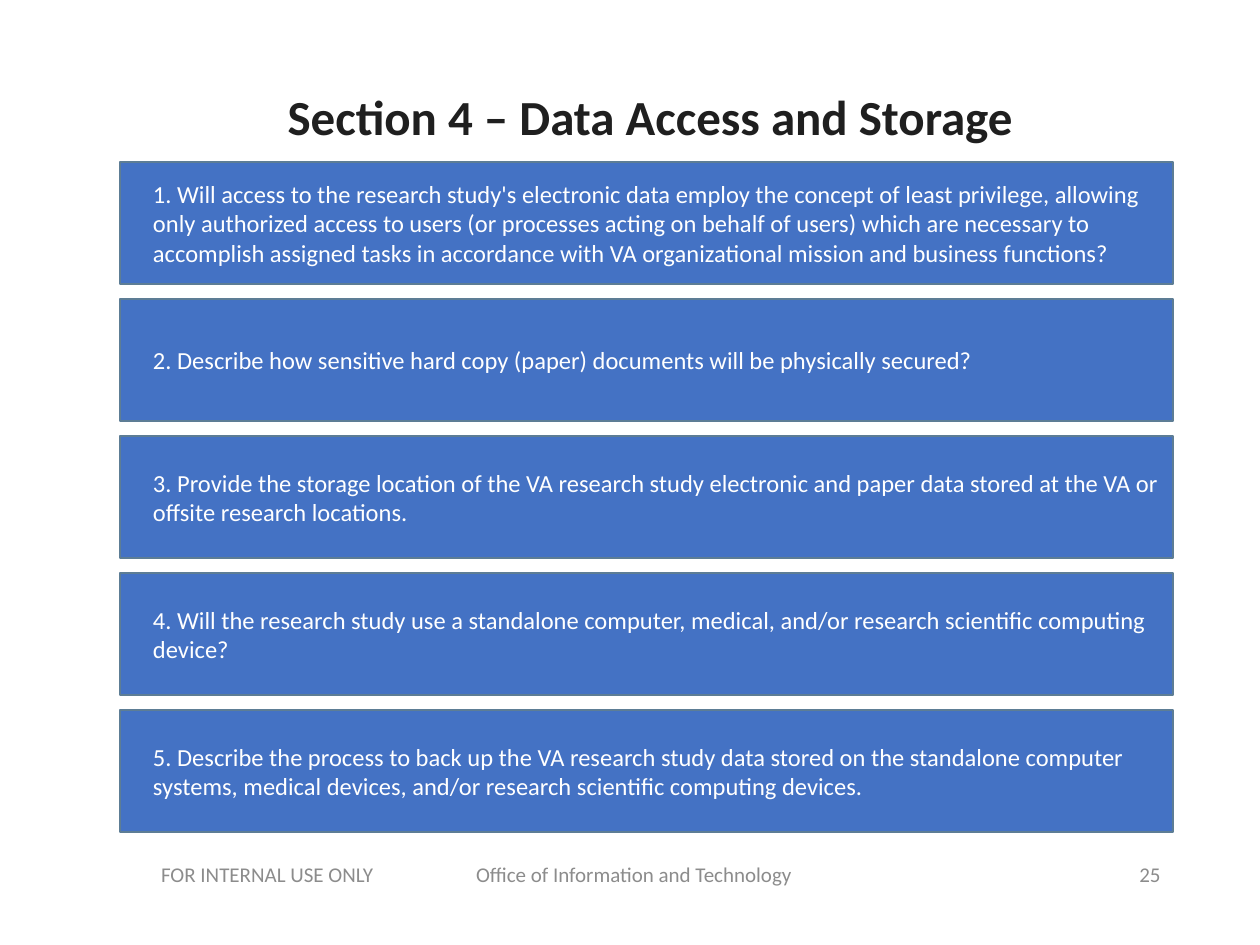
from dataclasses import dataclass

from pptx import Presentation
from pptx.dml.color import RGBColor
from pptx.enum.shapes import MSO_SHAPE
from pptx.enum.text import MSO_ANCHOR, PP_ALIGN
from pptx.util import Pt

RECT = MSO_SHAPE.RECTANGLE
MIDDLE = MSO_ANCHOR.MIDDLE
LEFT, CENTER, RIGHT = PP_ALIGN.LEFT, PP_ALIGN.CENTER, PP_ALIGN.RIGHT
SCALE = 914400 / 126


@dataclass(frozen=True)
class Theme:
    font: str = "Calibri"
    ink: str = "1F1F1F"
    fill: str = "4472C4"
    edge: str = "5D7D95"
    light: str = "FFFFFF"
    muted: str = "8C8C8C"
    head: int = 28
    body: int = 14
    foot: int = 12


THEME = Theme()
TITLE = "Section 4 – Data Access and Storage"
ITEMS = [
    "1. Will access to the research study's electronic data employ the concept "
    "of least privilege, allowing only authorized access to users (or processes "
    "acting on behalf of users) which are necessary to accomplish assigned tasks "
    "in accordance with VA organizational mission and business functions?",
    "2. Describe how sensitive hard copy (paper) documents will be physically "
    "secured?",
    "3. Provide the storage location of the VA research study electronic and "
    "paper data stored at the VA or offsite research locations.",
    "4. Will the research study use a standalone computer, medical, and/or "
    "research scientific computing device?",
    "5. Describe the process to back up the VA research study data stored on the "
    "standalone computer systems, medical devices, and/or research scientific "
    "computing devices.",
]


def px(n):
    return round(n * SCALE)


def write(shape, text, size, color, align, bold=False):
    frame = shape.text_frame
    frame.word_wrap = True
    frame.vertical_anchor = MIDDLE
    par = frame.paragraphs[0]
    par.text = text
    par.alignment = align
    font = par.font
    font.name, font.size, font.bold = THEME.font, Pt(size), bold
    font.color.rgb = RGBColor.from_string(color)
    return par


def label(slide, box, *style, **extra):
    shape = slide.shapes.add_textbox(*map(px, box))
    return write(shape, *style, **extra)


def title(slide, box):
    par = label(slide, box, TITLE, THEME.head, THEME.ink, CENTER, bold=True)
    par.line_spacing = 0.9


def panel(slide, box, text):
    shape = slide.shapes.add_shape(RECT, *map(px, box))
    shape.shadow.inherit = False
    shape.fill.solid()
    shape.fill.fore_color.rgb = RGBColor.from_string(THEME.fill)
    shape.line.color.rgb = RGBColor.from_string(THEME.edge)
    shape.line.width = Pt(1)
    frame = shape.text_frame
    frame.margin_left = frame.margin_right = px(8)
    frame.margin_top = frame.margin_bottom = px(8)
    par = write(shape, text, THEME.body, THEME.light, LEFT)
    props = par._p.get_or_add_pPr()
    props.set("marL", str(px(25)))
    props.set("indent", "0")


def stack(slide, box, gap=15):
    left, top, width, height = box
    tall = (height - gap * (len(ITEMS) - 1)) // len(ITEMS)
    for i, text in enumerate(ITEMS):
        panel(slide, (left, top + i * (tall + gap), width, tall), text)


def footer(slide, box):
    left, top, width, height = box
    side = 283
    note = "FOR INTERNAL USE ONLY\t\tOffice of Information and Technology"
    style = THEME.foot, THEME.muted
    label(slide, (left, top, 779, height), note, *style, CENTER)
    label(slide, (left + width - side, top, side, height), "25", *style, RIGHT)


def main():
    deck = Presentation()
    deck.slide_width, deck.slide_height = px(1260), px(945)
    slide = deck.slides.add_slide(deck.slide_layouts[6])
    title(slide, (107, 73, 1086, 94))
    stack(slide, (120, 162, 1053, 670))
    footer(slide, (87, 849, 1086, 51))
    deck.save("out.pptx")


if __name__ == "__main__":
    main()
